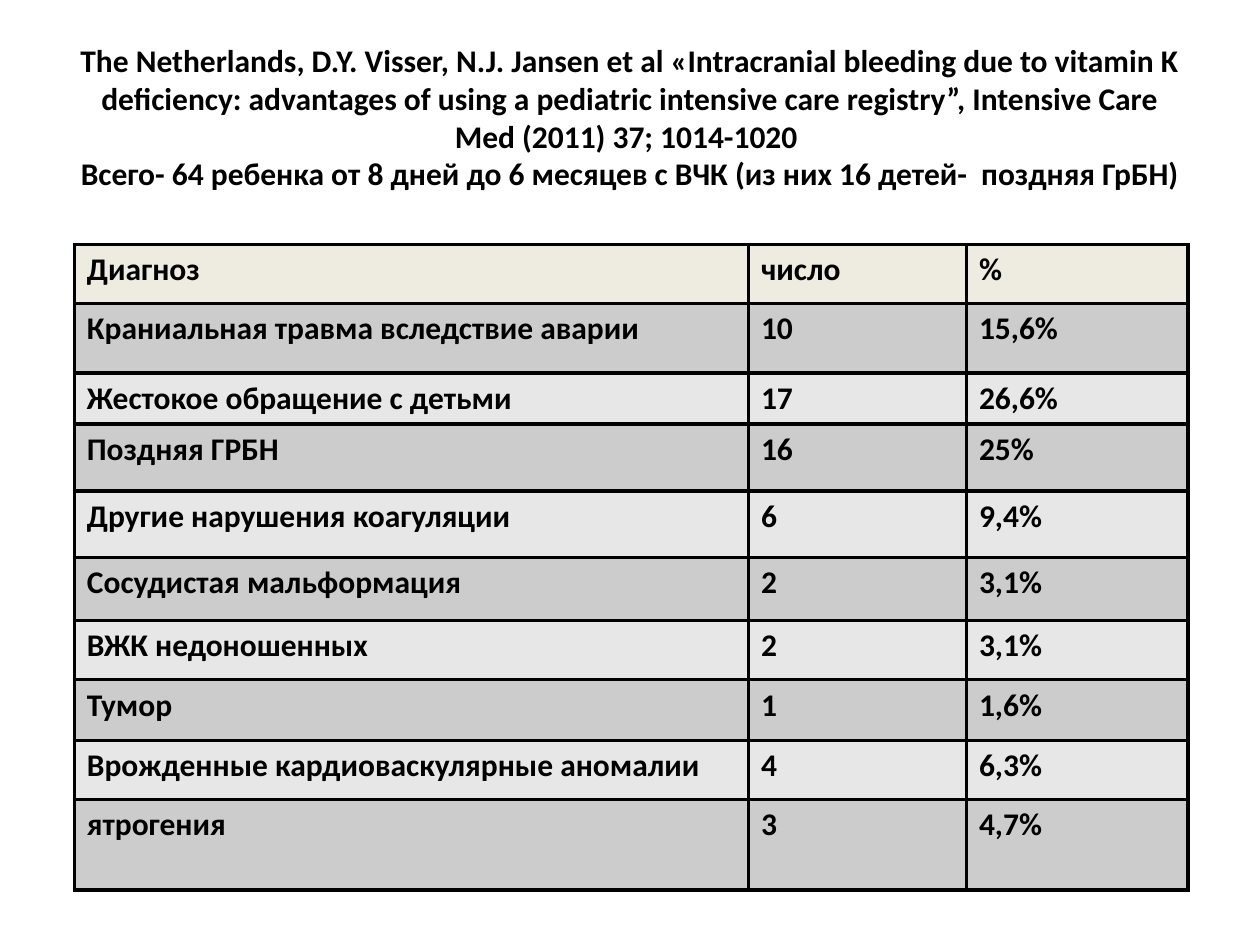
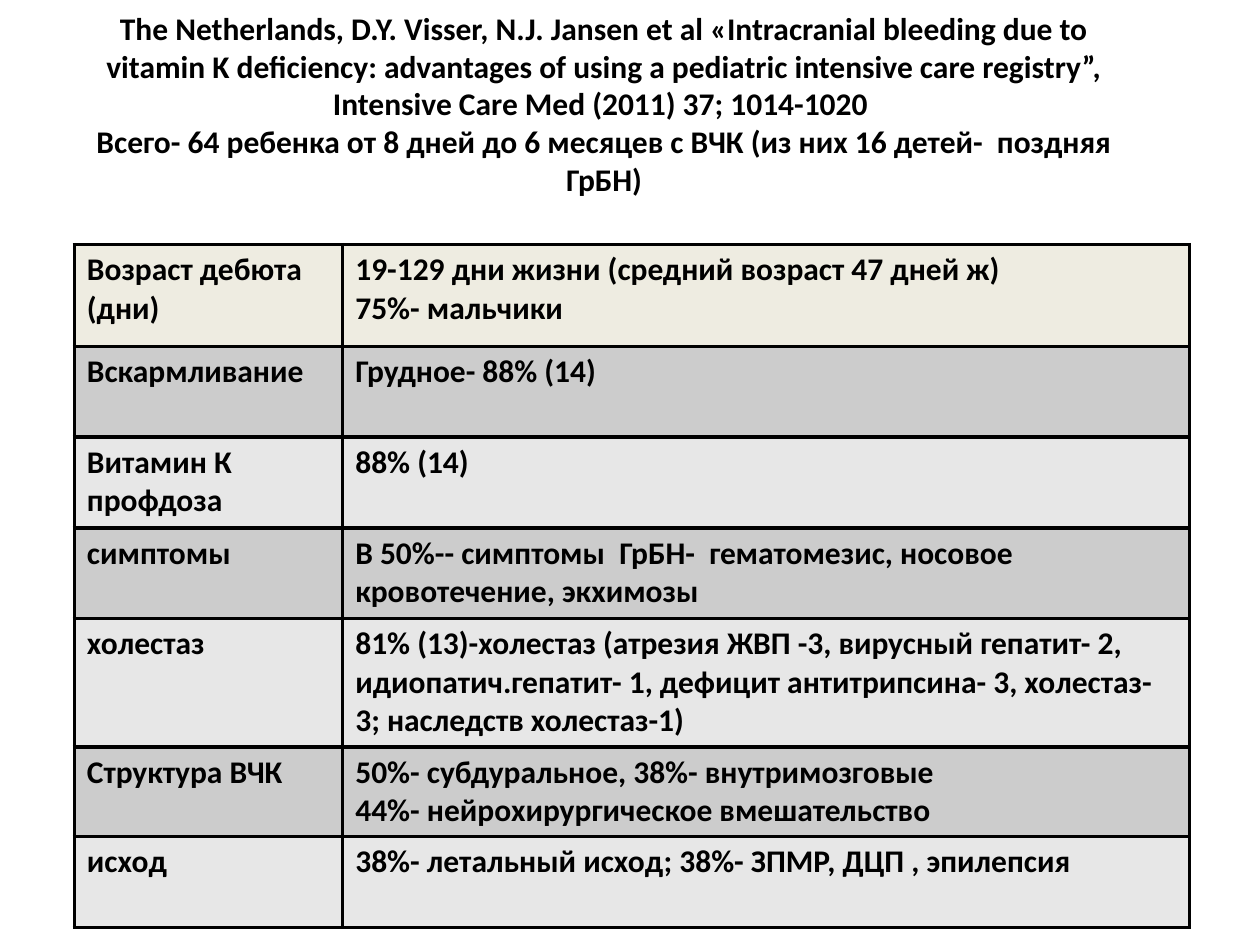
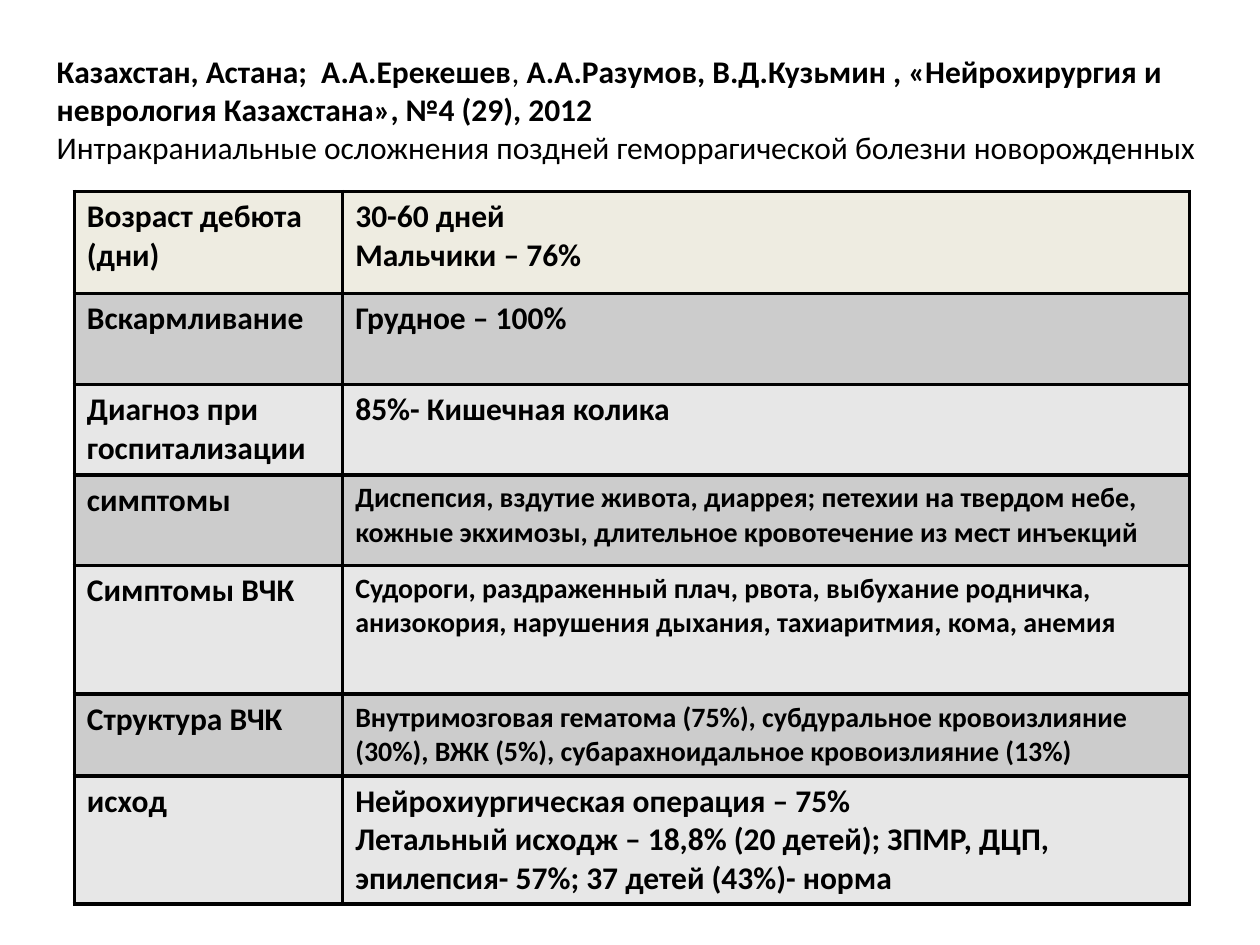
import lxml.etree
import pptx
import pptx.dml.color
import pptx.enum.text
import pptx.oxml.ns
import pptx.util

BLACK = pptx.dml.color.RGBColor(0x00, 0x00, 0x00)
HEADER_CREAM = pptx.dml.color.RGBColor(0xEE, 0xEC, 0xE1)
BAND_DARK = pptx.dml.color.RGBColor(0xCC, 0xCC, 0xCC)
BAND_LIGHT = pptx.dml.color.RGBColor(0xE7, 0xE7, 0xE7)

FONT = "Calibri"
BODY_SIZE = 18
SMALL_SIZE = 16
BORDER_WIDTH = 2.25
GRID_COLUMNS = 100
GRID_ROWS = 75
CELL = pptx.util.Inches(0.1)
TITLE_ONLY = 5

TABLE_LEFT = 5.9
DIAGNOSIS_COLUMNS = (53.5, 17.3, 17.6)
DIAGNOSIS_ROWS = (4.7, 5.5, 4, 5.3, 5.3, 5, 4.7, 4.8, 4.7, 7.2)
DETAIL_COLUMNS = (21.3, 67.2)
DETAIL_ROWS = (8.1, 7.2, 7.2, 7.2, 10.2, 6.5, 7.2)

DUTCH_TITLE = (
    "The Netherlands, D.Y. Visser, N.J. Jansen et al «Intracranial bleeding due to "
    "vitamin K deficiency: advantages of using a pediatric intensive care registry”, "
    "Intensive Care Med (2011) 37; 1014-1020 \v"
    "Всего- 64 ребенка от 8 дней до 6 месяцев с ВЧК (из них 16 детей-  поздняя ГрБН)"
)

KAZAKH_TITLE = (
    ("Казахстан, Астана;  А.А.Ерекешев", True),
    (", ", False),
    ("А.А.Разумов, В.Д.Кузьмин , «Нейрохирургия и неврология Казахстана», №4 (29), 2012", True),
    ("\v", True),
    ("Интракраниальные осложнения поздней геморрагической болезни новорожденных", False),
)

DIAGNOSES = (
    ("Диагноз", "число", "%"),
    ("Краниальная травма вследствие аварии", "10", "15,6%"),
    ("Жестокое обращение с детьми", "17", "26,6%"),
    ("Поздняя ГРБН", "16", "25%"),
    ("Другие нарушения коагуляции", "6", "9,4%"),
    ("Сосудистая мальформация", "2", "3,1%"),
    ("ВЖК недоношенных", "2", "3,1%"),
    ("Тумор", "1", "1,6%"),
    ("Врожденные кардиоваскулярные аномалии", "4", "6,3%"),
    ("ятрогения", "3", "4,7%"),
)

DUTCH_DETAILS = (
    ("Возраст дебюта (дни)", "19-129 дни жизни (средний возраст 47 дней ж)\n75%- мальчики"),
    ("Вскармливание", "Грудное- 88% (14)"),
    ("Витамин К профдоза", "88% (14)"),
    ("симптомы", "В 50%-- симптомы  ГрБН-  гематомезис, носовое кровотечение, экхимозы"),
    ("холестаз", "81% (13)-холестаз (атрезия ЖВП -3, вирусный гепатит- 2, "
                 "идиопатич.гепатит- 1, дефицит антитрипсина- 3, холестаз- 3; "
                 "наследств холестаз-1)"),
    ("Структура ВЧК", "50%- субдуральное, 38%- внутримозговые\n"
                      "44%- нейрохирургическое вмешательство"),
    ("исход", "38%- летальный исход; 38%- ЗПМР, ДЦП , эпилепсия"),
)

KAZAKH_DETAILS = (
    ("Возраст дебюта (дни)", "30-60 дней\nМальчики – 76%"),
    ("Вскармливание", "Грудное – 100%"),
    ("Диагноз при госпитализации", "85%- Кишечная колика"),
    ("симптомы", "Диспепсия, вздутие живота, диаррея; петехии на твердом небе, "
                 "кожные экхимозы, длительное кровотечение из мест инъекций"),
    ("Симптомы ВЧК", "Судороги, раздраженный плач, рвота, выбухание родничка, "
                     "анизокория, нарушения дыхания, тахиаритмия, кома, анемия"),
    ("Структура ВЧК", "Внутримозговая гематома (75%), субдуральное кровоизлияние "
                      "(30%), ВЖК (5%), субарахноидальное кровоизлияние (13%)"),
    ("исход", "Нейрохиургическая операция – 75%\n"
              "Летальный исходж – 18,8% (20 детей); ЗПМР, ДЦП, эпилепсия- 57%; "
              "37 детей (43%)- норма"),
)
KAZAKH_SMALL_CELLS = {(row, 1) for row in (3, 4, 5)}


def grid(count):
    return round(count * CELL)


def format_run(run, size=BODY_SIZE, bold=True):
    run.font.name = FONT
    run.font.size = pptx.util.Pt(size)
    run.font.bold = bold
    run.font.color.rgb = BLACK


def format_text(text_frame, size=BODY_SIZE):
    for paragraph in text_frame.paragraphs:
        for run in paragraph.runs:
            format_run(run, size)


def place_title(slide, left, top, width, height, alignment):
    title = slide.shapes.title
    title.left, title.top = grid(left), grid(top)
    title.width, title.height = grid(width), grid(height)
    text_frame = title.text_frame
    text_frame.word_wrap = True
    text_frame.auto_size = pptx.enum.text.MSO_AUTO_SIZE.NONE
    text_frame.vertical_anchor = pptx.enum.text.MSO_ANCHOR.MIDDLE
    text_frame.paragraphs[0].alignment = alignment
    return text_frame


def add_dutch_title(slide, width, height, bottom_margin=0.5):
    text_frame = place_title(slide, 5, 3, width, height, pptx.enum.text.PP_ALIGN.CENTER)
    text_frame.margin_bottom = grid(bottom_margin)
    text_frame.text = DUTCH_TITLE
    text_frame.paragraphs[0].alignment = pptx.enum.text.PP_ALIGN.CENTER
    format_text(text_frame)


def add_kazakh_title(slide):
    text_frame = place_title(slide, 3.5, 3.6, 93.7, 10.1, pptx.enum.text.PP_ALIGN.LEFT)
    paragraph = text_frame.paragraphs[0]
    for text, bold in KAZAKH_TITLE:
        if text == "\v":
            paragraph.add_line_break()
        else:
            run = paragraph.add_run()
            run.text = text
            format_run(run, bold=bold)


def add_borders(cell):
    properties = cell._tc.get_or_add_tcPr()
    for position, side in enumerate(("lnL", "lnR", "lnT", "lnB")):
        line = lxml.etree.Element(
            pptx.oxml.ns.qn("a:" + side), w=str(pptx.util.Pt(BORDER_WIDTH)))
        fill = lxml.etree.SubElement(line, pptx.oxml.ns.qn("a:solidFill"))
        lxml.etree.SubElement(fill, pptx.oxml.ns.qn("a:srgbClr"), val=str(BLACK))
        properties.insert(position, line)


def row_colour(row):
    if row == 0:
        return HEADER_CREAM
    return BAND_DARK if row % 2 else BAND_LIGHT


def add_grid_table(slide, top, columns, rows, content, small_cells=()):
    frame = slide.shapes.add_table(
        len(rows), len(columns), grid(TABLE_LEFT), grid(top),
        grid(sum(columns)), grid(sum(rows)))
    table = frame.table
    table.horz_banding = False
    for column, width in zip(table.columns, columns):
        column.width = grid(width)
    for row, height in zip(table.rows, rows):
        row.height = grid(height)
    for row_index, texts in enumerate(content):
        for column_index, text in enumerate(texts):
            cell = table.cell(row_index, column_index)
            cell.fill.solid()
            cell.fill.fore_color.rgb = row_colour(row_index)
            cell.text_frame.text = text
            small = (row_index, column_index) in small_cells
            format_text(cell.text_frame, SMALL_SIZE if small else BODY_SIZE)
            add_borders(cell)


def main():
    presentation = pptx.Presentation()
    presentation.slide_width = grid(GRID_COLUMNS)
    presentation.slide_height = grid(GRID_ROWS)
    layout = presentation.slide_layouts[TITLE_ONLY]

    diagnosis_slide = presentation.slides.add_slide(layout)
    add_dutch_title(diagnosis_slide, 90, 12.5)
    add_grid_table(diagnosis_slide, 19.4, DIAGNOSIS_COLUMNS, DIAGNOSIS_ROWS, DIAGNOSES)

    dutch_slide = presentation.slides.add_slide(layout)
    add_dutch_title(dutch_slide, 85.9, 16.4, bottom_margin=6.5)
    add_grid_table(dutch_slide, 19.4, DETAIL_COLUMNS, DETAIL_ROWS, DUTCH_DETAILS)

    kazakh_slide = presentation.slides.add_slide(layout)
    add_kazakh_title(kazakh_slide)
    add_grid_table(kazakh_slide, 15.2, DETAIL_COLUMNS, DETAIL_ROWS, KAZAKH_DETAILS,
                   KAZAKH_SMALL_CELLS)

    presentation.save("out.pptx")


if __name__ == "__main__":
    main()
